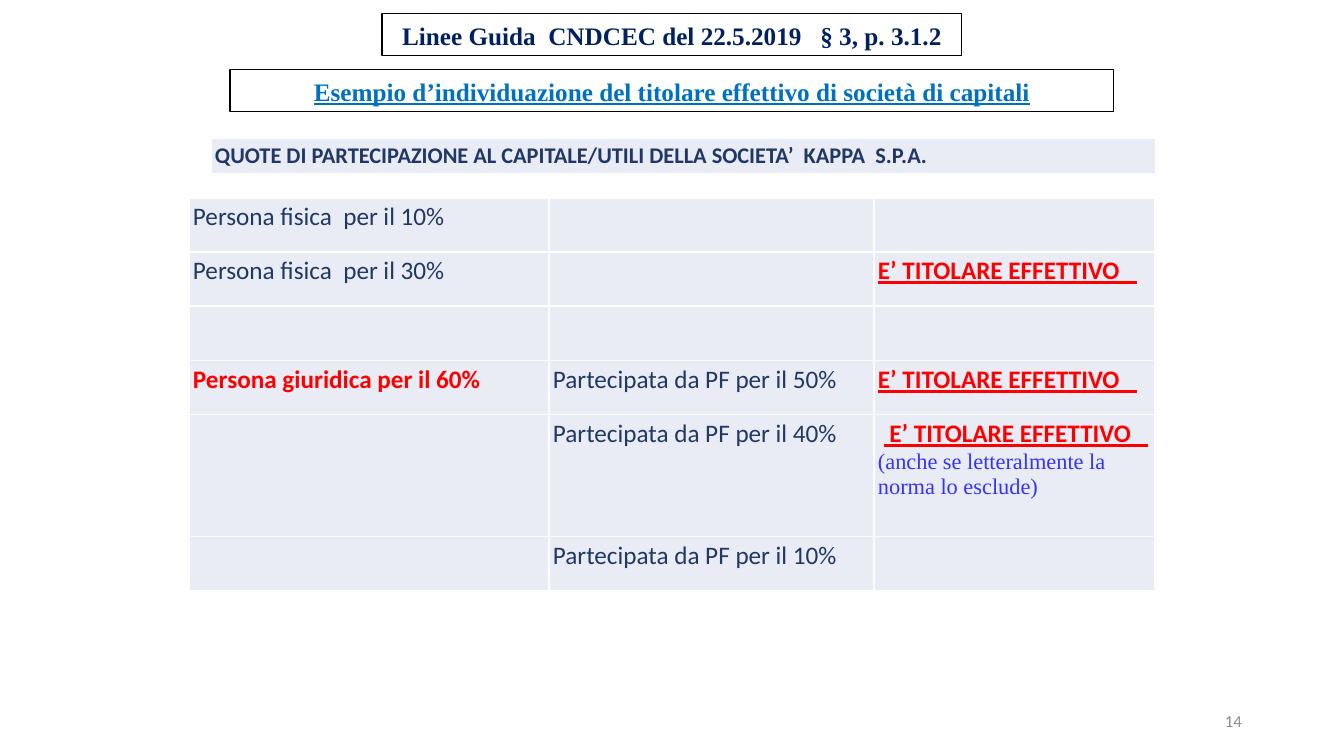
import dataclasses
import pptx
import pptx.util
import pptx.dml.color
import pptx.enum.text
import pptx.enum.shapes
import pptx.oxml


@dataclasses.dataclass(frozen=True)
class Theme:
    sans: str = "Calibri"
    serif: str = "Times New Roman"
    white: str = "FFFFFF"
    black: str = "000000"
    deep: str = "002060"
    azure: str = "0070C0"
    navy: str = "203864"
    red: str = "FF0000"
    violet: str = "3333FF"
    grey: str = "8C8C8C"
    pale: str = "E9EBF5"
    body: int = 18
    note: int = 16
    small: int = 12


SCALE = 914400 / 100.8
ALIGN = pptx.enum.text.PP_ALIGN
THEME = Theme()


def px(n):
    return pptx.util.Emu(round(n * SCALE))


def tint(hue):
    return pptx.dml.color.RGBColor.from_string(hue)


def run(text, hue=THEME.navy, size=THEME.body, font=THEME.sans, bold=False, under=False):
    return text, hue, size, font, bold, under


class Page:
    def __init__(self, deck, theme):
        self.theme = theme
        self.slide = deck.slides.add_slide(deck.slide_layouts[6])

    def fill_text(self, frame, lines, inset, align=ALIGN.LEFT):
        frame.word_wrap = True
        frame.margin_left = frame.margin_right = px(inset[0])
        frame.margin_top = frame.margin_bottom = px(inset[1])
        for i, line in enumerate(lines):
            para = frame.paragraphs[0] if i == 0 else frame.add_paragraph()
            para.alignment = align
            for text, hue, size, font, bold, under in line:
                part = para.add_run()
                part.text = text
                part.font.name = font
                part.font.size = pptx.util.Pt(size)
                part.font.bold = bold
                part.font.underline = under
                part.font.color.rgb = tint(hue)

    def banner(self, x, y, w, h, line):
        box = self.slide.shapes.add_shape(
            pptx.enum.shapes.MSO_SHAPE.RECTANGLE, px(x), px(y), px(w), px(h))
        box.shadow.inherit = False
        box.fill.solid()
        box.fill.fore_color.rgb = tint(self.theme.white)
        box.line.color.rgb = tint(self.theme.black)
        box.line.width = pptx.util.Pt(0.75)
        self.fill_text(box.text_frame, [line], (12, 6), ALIGN.CENTER)

    def label(self, x, y, w, h, line):
        box = self.slide.shapes.add_textbox(px(x), px(y), px(w), px(h))
        box.text_frame.vertical_anchor = pptx.enum.text.MSO_ANCHOR.MIDDLE
        self.fill_text(box.text_frame, [line], (10, 5), ALIGN.RIGHT)

    def edge(self, cell):
        props = cell._tc.get_or_add_tcPr()
        space = "http://schemas.openxmlformats.org/drawingml/2006/main"
        for i, side in enumerate(("lnL", "lnR", "lnT", "lnB")):
            props.insert(i, pptx.oxml.parse_xml(
                f'<a:{side} xmlns:a="{space}" w="12700"><a:solidFill>'
                f'<a:srgbClr val="{self.theme.white}"/></a:solidFill></a:{side}>'))

    def table(self, x, y, cols, rows, texts):
        grid = self.slide.shapes.add_table(
            len(rows), len(cols), px(x), px(y), px(sum(cols)), px(sum(rows))).table
        grid.first_row = grid.horz_banding = False
        for col, w in zip(grid.columns, cols):
            col.width = px(w)
        for r, h in enumerate(rows):
            grid.rows[r].height = px(h)
            for c in range(len(cols)):
                cell = grid.cell(r, c)
                cell.fill.solid()
                cell.fill.fore_color.rgb = tint(self.theme.pale)
                self.edge(cell)
                if (r, c) in texts:
                    cell.margin_left = cell.margin_right = px(4)
                    cell.margin_top = cell.margin_bottom = px(4)
                    self.fill_text(cell.text_frame, texts[r, c], (4, 4))


def main():
    deck = pptx.Presentation()
    deck.slide_width, deck.slide_height = px(1344), px(756)
    t = THEME
    page = Page(deck, t)

    page.banner(382, 14, 580, 42, [run(
        "Linee Guida  CNDCEC del 22.5.2019   § 3, p. 3.1.2", t.deep, font=t.serif, bold=True)])
    page.banner(230, 70, 884, 42, [run(
        "Esempio d’individuazione del titolare effettivo di società di capitali",
        t.azure, font=t.serif, bold=True, under=True)])

    page.table(211, 138, [945], [34], {(0, 0): [[run(
        "QUOTE DI PARTECIPAZIONE AL CAPITALE/UTILI DELLA SOCIETA’  KAPPA  S.P.A.",
        size=t.note, bold=True)]]})

    owner = run("E’ TITOLARE EFFETTIVO   ", t.red, bold=True, under=True)
    page.table(189, 198, [360, 325, 281], [54, 54, 55, 54, 122, 54], {
        (0, 0): [[run("Persona fisica  per il 10%")]],
        (1, 0): [[run("Persona fisica  per il 30%")]],
        (1, 2): [[owner]],
        (3, 0): [[run("Persona giuridica per il 60%", t.red, bold=True)]],
        (3, 1): [[run("Partecipata da PF per il 50%")]],
        (3, 2): [[owner]],
        (4, 1): [[run("Partecipata da PF per il 40%")]],
        (4, 2): [
            [run(" ", t.red), run(" ", t.red, under=True), owner],
            [run("(anche se letteralmente la norma lo esclude)", t.violet, t.note, t.serif)]],
        (5, 1): [[run("Partecipata da PF per il 10%")]],
    })

    page.label(950, 701, 302, 40, [run("14", t.grey, t.small)])
    deck.save("out.pptx")


if __name__ == "__main__":
    main()
